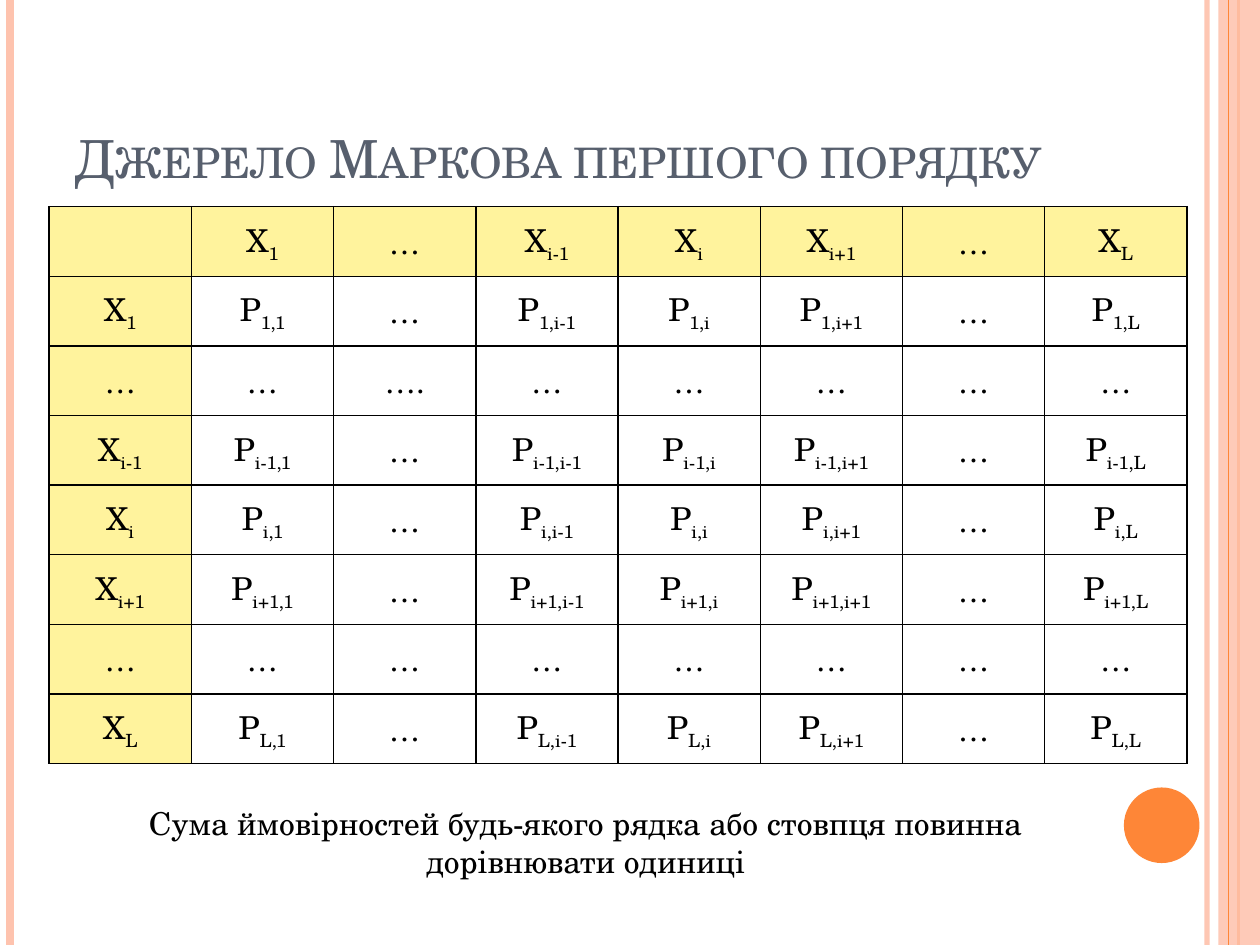
from dataclasses import dataclass

from lxml import etree
from pptx import Presentation
from pptx.dml.color import RGBColor
from pptx.enum import shapes, text
from pptx.oxml import ns
from pptx.util import Emu, Inches, Pt

PEACH = RGBColor(0xFE, 0xC3, 0xAE)
ORANGE = RGBColor(0xFE, 0x86, 0x37)
YELLOW = RGBColor(0xFF, 0xF3, 0x9D)
SLATE = RGBColor(0x57, 0x5F, 0x6D)
BLACK = RGBColor(0, 0, 0)

FONT = "TeX Gyre Schola"
COLS, ROWS = 100, 75
WIDTH, HEIGHT = Inches(10), Inches(7.5)
INDICES = ["1", "…", "i-1", "i", "i+1", "…", "L"]


@dataclass
class Box:
    col: float
    row: float
    cols: float
    rows: float

    def emu(self) -> list[Emu]:
        return [x(self.col), y(self.row), x(self.cols), y(self.rows)]


@dataclass
class Stripe:
    col: float
    color: RGBColor
    width: float
    opacity: int = 100


@dataclass
class Block:
    kind: shapes.MSO_SHAPE
    box: Box
    color: RGBColor
    opacity: int = 100


@dataclass
class Caption:
    words: str
    box: Box
    size: float
    color: RGBColor
    anchor: text.MSO_ANCHOR
    align: text.PP_ALIGN
    caps: str = "none"


BACK_STRIPES = [Stripe(95.8, PEACH, 3, 93), Stripe(0.8, PEACH, 4.5),
                Stripe(98.3, ORANGE, 1.5)]
BAND = Block(shapes.MSO_SHAPE.RECTANGLE, Box(96.7, 0, 3.3, ROWS), PEACH, 87)
FRONT_STRIPE = Stripe(97.5, ORANGE, 0.75)
DISC = Block(shapes.MSO_SHAPE.OVAL, Box(89.2, 62.5, 6, 6), ORANGE)
TITLE = Caption("Джерело Маркова першого порядку", Box(5, 3, 81.7, 12.5), 30,
                SLATE, text.MSO_ANCHOR.BOTTOM, text.PP_ALIGN.LEFT, "small")
NOTE = Caption("Сума ймовірностей будь-якого рядка або стовпця повинна "
               "дорівнювати одиниці", Box(4.7, 63.3, 83.6, 7.1), 18,
               BLACK, text.MSO_ANCHOR.TOP, text.PP_ALIGN.CENTER)
MATRIX = Box(3.9, 16.4, 90.3, 44.2)


def x(cols: float) -> Emu:
    return Emu(round(WIDTH * cols / COLS))


def y(rows: float) -> Emu:
    return Emu(round(HEIGHT * rows / ROWS))


def apply(obj, **values) -> None:
    for name, value in values.items():
        setattr(obj, name, value)


def set_opacity(element, percent: int) -> None:
    if percent < 100:
        color = next(element.iter(ns.qn("a:srgbClr")))
        etree.SubElement(color, ns.qn("a:alpha")).set("val", str(percent * 1000))


def add_stripe(s, stripe: Stripe) -> None:
    sp = s.shapes.add_connector(shapes.MSO_CONNECTOR.STRAIGHT,
                                x(stripe.col), 0, x(stripe.col), HEIGHT)
    sp.line.width = Pt(stripe.width)
    sp.line.color.rgb = stripe.color
    set_opacity(sp._element.spPr, stripe.opacity)
    etree.SubElement(sp._element.spPr, ns.qn("a:effectLst"))


def add_block(s, block: Block) -> None:
    sp = s.shapes.add_shape(block.kind, *block.box.emu())
    sp.shadow.inherit = False
    sp.fill.solid()
    sp.fill.fore_color.rgb = block.color
    sp.line.fill.background()
    set_opacity(sp._element.spPr, block.opacity)


def add_run(p, words: str, size: float, color: RGBColor, **extra: str) -> None:
    r = p.add_run()
    r.text = words
    apply(r.font, name=FONT, size=Pt(size), bold=False)
    r.font.color.rgb = color
    for name, value in extra.items():
        r._r.get_or_add_rPr().set(name, value)


def add_caption(s, caption: Caption) -> None:
    tf = s.shapes.add_textbox(*caption.box.emu()).text_frame
    apply(tf, word_wrap=True, vertical_anchor=caption.anchor)
    p = tf.paragraphs[0]
    p.alignment = caption.align
    add_run(p, caption.words, caption.size, caption.color, cap=caption.caps)


def symbol(row: int, col: int) -> tuple[str, str]:
    if row == col == 0:
        return "", ""
    if (row, col) == (2, 2):
        return "….", ""
    used = [INDICES[n - 1] for n in (row, col) if n]
    if "…" in used:
        return "…", ""
    return "P" if len(used) == 2 else "X", ",".join(used)


def add_borders(cell) -> None:
    props = cell._tc.get_or_add_tcPr()
    for n, side in enumerate(("lnL", "lnR", "lnT", "lnB")):
        ln = etree.Element(ns.qn(f"a:{side}"), w=str(Pt(1)))
        fill = etree.SubElement(ln, ns.qn("a:solidFill"))
        etree.SubElement(fill, ns.qn("a:srgbClr"), val=str(BLACK))
        props.insert(n, ln)


def fill_cell(cell, row: int, col: int) -> None:
    cell.vertical_anchor = text.MSO_ANCHOR.MIDDLE
    if row == 0 or col == 0:
        cell.fill.solid()
        cell.fill.fore_color.rgb = YELLOW
    else:
        cell.fill.background()
    add_borders(cell)
    p = cell.text_frame.paragraphs[0]
    p.alignment = text.PP_ALIGN.CENTER
    letter, index = symbol(row, col)
    if letter:
        add_run(p, letter, 18, BLACK)
    if index:
        add_run(p, index, 18, BLACK, baseline="-25000")


def add_matrix(s, box: Box) -> None:
    count = len(INDICES) + 1
    table = s.shapes.add_table(count, count, *box.emu()).table
    apply(table, first_row=False, horz_banding=False)
    for row in range(count):
        for col in range(count):
            fill_cell(table.cell(row, col), row, col)


def main() -> None:
    prs = Presentation()
    apply(prs, slide_width=WIDTH, slide_height=HEIGHT)
    s = prs.slides.add_slide(prs.slide_layouts[6])
    for stripe in BACK_STRIPES:
        add_stripe(s, stripe)
    add_block(s, BAND)
    add_stripe(s, FRONT_STRIPE)
    add_block(s, DISC)
    add_caption(s, TITLE)
    add_matrix(s, MATRIX)
    add_caption(s, NOTE)
    prs.save("out.pptx")


if __name__ == "__main__":
    main()
